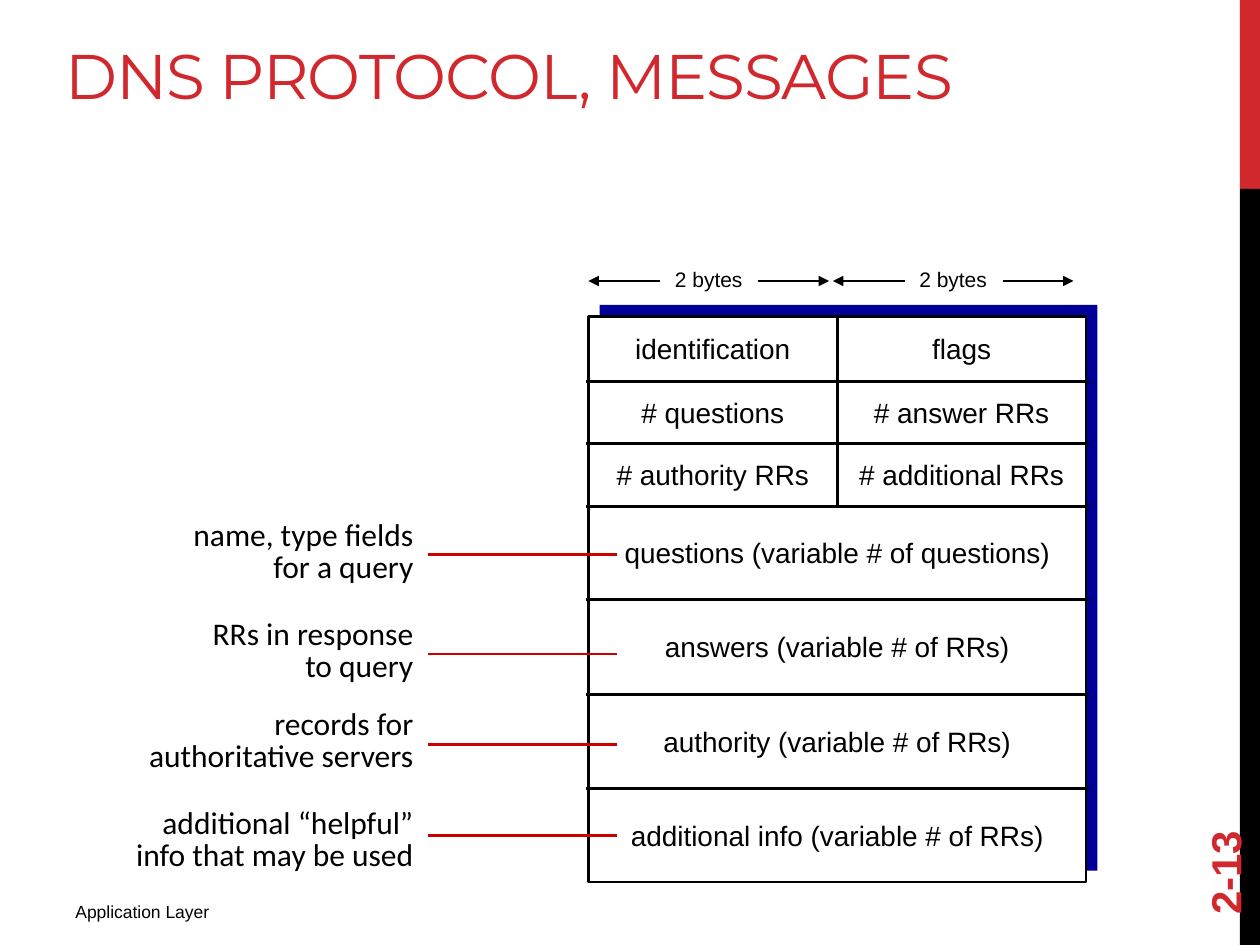
from dataclasses import dataclass
from itertools import pairwise

from lxml.etree import SubElement
from pptx import Presentation
from pptx.dml.color import RGBColor
from pptx.enum.shapes import MSO_CONNECTOR as Connector, MSO_SHAPE as Shape
from pptx.enum.text import MSO_ANCHOR as Anchor, MSO_AUTO_SIZE as AutoSize, PP_ALIGN as Align
from pptx.oxml.ns import qn
from pptx.util import Inches, Pt


@dataclass(frozen=True)
class Theme:
    """Colours, fonts, type sizes and line widths of the slide."""
    accent: str = "D1282E"
    ink: str = "000000"
    paper: str = "FFFFFF"
    shadow: str = "000099"
    leader: str = "CC0000"
    title_font: str = "Montserrat"
    label_font: str = "Calibri"
    body_font: str = "Arial"
    title_size: float = 36
    number_size: float = 24
    label_size: float = 18
    field_size: float = 16
    width_size: float = 12
    footer_size: float = 10
    rule: float = 1.5
    arrow: float = 0.75


@dataclass(frozen=True)
class Box:
    """A rectangle in inches."""
    left: float
    top: float
    width: float
    height: float

    @property
    def right(self):
        """Return the right edge."""
        return self.left + self.width

    @property
    def bottom(self):
        """Return the bottom edge."""
        return self.top + self.height

    @property
    def centre(self):
        """Return the horizontal centre."""
        return self.left + self.width / 2

    def lengths(self):
        """Return the position and size as slide lengths."""
        return [Inches(value) for value in (self.left, self.top, self.width, self.height)]


THEME = Theme()
HEADER_FIELDS = [
    (("identification", 1.43), ("flags", 0.67)),
    (("# questions", 1.34), ("# answer RRs", 1.6)),
    (("# authority RRs", 1.73), ("# additional RRs", 1.83)),
]
SECTIONS = [
    ("questions (variable # of questions)", 3.59),
    ("answers (variable # of RRs)", 2.94),
    ("authority (variable # of RRs)", 2.97),
    ("additional info (variable # of RRs)", 3.48),
]
ROW_EDGES = [2.51, 3.03, 3.52, 4.02, 4.76, 5.51, 6.26, 7.0]
LABELS = [
    ("name, type fields\nfor a query", 4.05, 2.08, 4.4),
    ("RRs in response\nto query", 4.84, 2.37, 5.19),
    ("records for\nauthoritative servers", 5.55, 2.53, 5.91),
    ("additional “helpful”\ninfo that may be used", 6.34, 2.62, 6.63),
]


def format_text(frame, text, font, size, color=THEME.ink, align=Align.LEFT,
                bold=False, line_spacing=None):
    """Fill a text frame and format its runs."""
    frame.text = text
    for paragraph in frame.paragraphs:
        paragraph.alignment = align
        paragraph.line_spacing = line_spacing
        for run in paragraph.runs:
            run.font.name = font
            run.font.size = Pt(size)
            run.font.bold = bold
            run.font.color.rgb = RGBColor.from_string(color)


def add_text(shapes, box, text, font, size, anchor=Anchor.TOP, wrap=False, **style):
    """Add a text box and return it."""
    shape = shapes.add_textbox(*box.lengths())
    frame = shape.text_frame
    frame.word_wrap = wrap
    frame.vertical_anchor = anchor
    format_text(frame, text, font, size, **style)
    return shape


def add_block(shapes, box, fill, outlined=False):
    """Add a filled rectangle."""
    shape = shapes.add_shape(Shape.RECTANGLE, *box.lengths())
    shape.shadow.inherit = False
    shape.fill.solid()
    shape.fill.fore_color.rgb = RGBColor.from_string(fill)
    if outlined:
        shape.line.color.rgb = RGBColor.from_string(THEME.ink)
        shape.line.width = Pt(THEME.rule)
    else:
        shape.line.fill.background()


def add_line(shapes, start, end, color=THEME.ink, width=THEME.rule, arrow=False):
    """Add a straight line, with an arrowhead at its end if asked."""
    line = shapes.add_connector(Connector.STRAIGHT, *map(Inches, start + end))
    line.line.color.rgb = RGBColor.from_string(color)
    line.line.width = Pt(width)
    properties = line._element.spPr
    if arrow:
        SubElement(properties.find(qn("a:ln")), qn("a:tailEnd"), type="triangle")
    SubElement(properties, qn("a:effectLst"))


def place_title(slide, box):
    """Place the slide title."""
    title = slide.shapes.title
    title.left, title.top, title.width, title.height = box.lengths()
    frame = title.text_frame
    frame.auto_size = AutoSize.NONE
    frame.vertical_anchor = Anchor.BOTTOM
    format_text(frame, "DNS PROTOCOL, MESSAGES", THEME.title_font, THEME.title_size, THEME.accent)
    frame.paragraphs[0].runs[0].font._element.set("spc", "-60")


def place_side_band(slide, box):
    """Place the two-colour band, its upper fifth in the accent colour."""
    split = box.height / 5
    add_block(slide.shapes, Box(box.left, box.top, box.width, split), THEME.accent)
    add_block(slide.shapes, Box(box.left, box.top + split, box.width, box.height - split), THEME.ink)


def place_footer(slide, footer_box, number_box):
    """Place the chapter name and the upright slide number."""
    add_text(slide.shapes, footer_box, "Application Layer", THEME.body_font,
             THEME.footer_size, wrap=True)
    number = add_text(slide.shapes, number_box, "2-13", THEME.body_font, THEME.number_size,
                      anchor=Anchor.MIDDLE, wrap=True, color=THEME.accent, bold=True)
    number.rotation = 270


def place_message(slide, box):
    """Place the message format with its header fields and sections."""
    shapes = slide.shapes.add_group_shape().shapes
    add_block(shapes, Box(box.left + 0.09, box.top - 0.09, box.width, box.height), THEME.shadow)
    add_block(shapes, box, THEME.paper, outlined=True)
    for edge in ROW_EDGES[1:-1]:
        add_line(shapes, (box.left - 0.02, edge), (box.right + 0.02, edge))
    add_line(shapes, (box.centre, box.top), (box.centre, ROW_EDGES[len(HEADER_FIELDS)]))
    rows = HEADER_FIELDS + [(section,) for section in SECTIONS]
    for fields, (top, bottom) in zip(rows, pairwise(ROW_EDGES)):
        cell_width = box.width / len(fields)
        for column, (text, width) in enumerate(fields):
            left = box.left + (column + 0.5) * cell_width - width / 2
            field_box = Box(left, (top + bottom - 0.37) / 2, width, 0.37)
            add_text(shapes, field_box, text, THEME.body_font, THEME.field_size,
                     align=Align.CENTER)


def place_byte_width(slide, box):
    """Place a byte count between two outward arrows."""
    shapes = slide.shapes.add_group_shape().shapes
    middle = box.top + 0.16
    add_text(shapes, Box(box.centre - 0.37, box.top, 0.74, box.height), "2 bytes",
             THEME.body_font, THEME.width_size, align=Align.CENTER)
    for inner, outer in ((box.left + 0.57, box.left), (box.right - 0.56, box.right)):
        add_line(shapes, (inner, middle), (outer, middle), width=THEME.arrow, arrow=True)


def place_labels(slide, box):
    """Place the section labels and their leader lines."""
    for text, top, width, line_top in LABELS:
        add_text(slide.shapes, Box(box.right - width, top, width, 0.67), text,
                 THEME.label_font, THEME.label_size, anchor=Anchor.MIDDLE,
                 align=Align.RIGHT, line_spacing=0.85)
        add_line(slide.shapes, (box.right + 1.52, line_top), (box.right + 0.02, line_top),
                 color=THEME.leader)


def main():
    """Build and save the slide."""
    presentation = Presentation()
    presentation.slide_width, presentation.slide_height = Inches(10), Inches(7.5)
    slide = presentation.slides.add_slide(presentation.slide_layouts[5])
    place_side_band(slide, Box(9.84, 0, 0.16, 7.5))
    place_footer(slide, Box(0.5, 7.1, 3.75, 0.31), Box(9, 6.44, 1.44, 0.4))
    place_message(slide, Box(4.67, 2.51, 3.95, 4.49))
    place_labels(slide, Box(0.75, 4.05, 2.63, 2.96))
    for left in (4.67, 6.61):
        place_byte_width(slide, Box(left, 2.07, 1.91, 0.3))
    place_title(slide, Box(0.42, 0, 8.5, 0.94))
    presentation.save("out.pptx")


if __name__ == "__main__":
    main()
